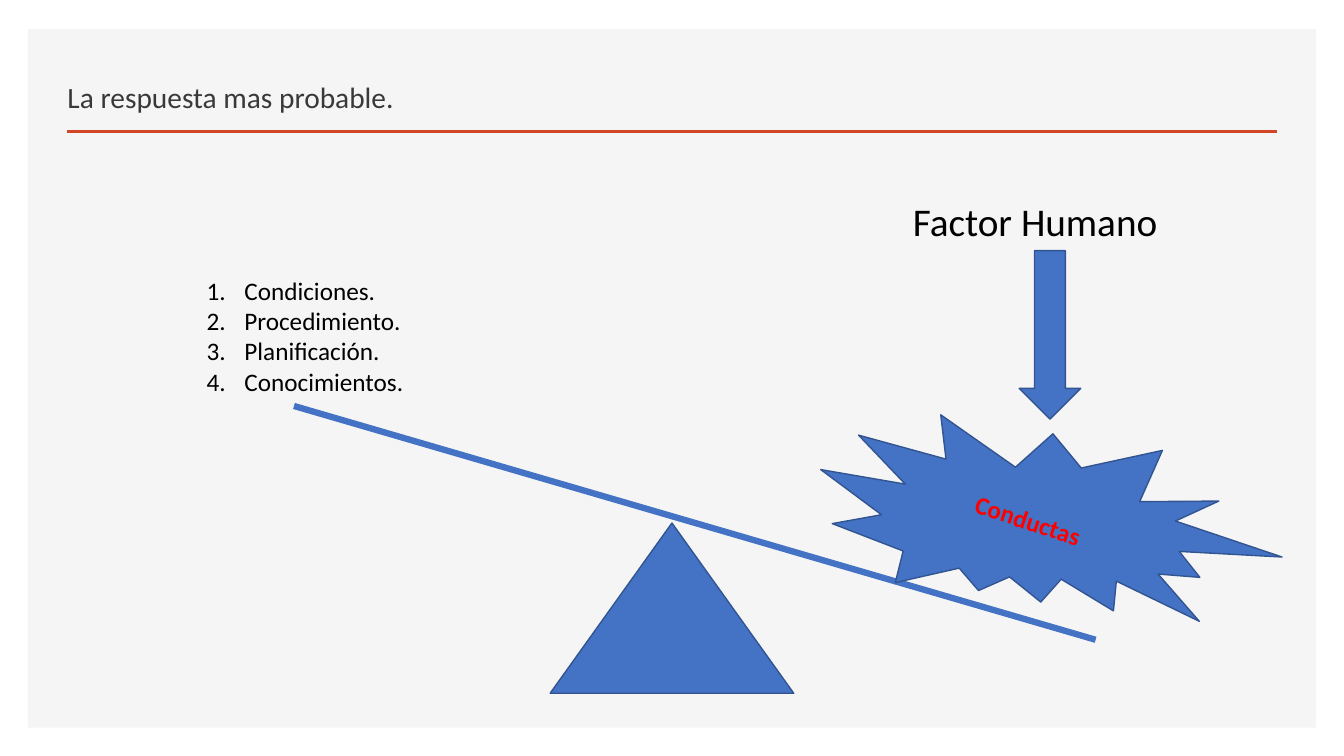
from lxml.etree import SubElement
from pptx import Presentation
from pptx.dml.color import RGBColor
from pptx.enum.shapes import MSO_CONNECTOR, MSO_SHAPE
from pptx.enum.text import MSO_ANCHOR, MSO_AUTO_SIZE, PP_ALIGN
from pptx.oxml.ns import qn
from pptx.util import Pt

COLORS = {
    "panel": "F5F5F5", "rule": "D24726", "title": "3B3838", "text": "000000",
    "blue": "4472C4", "outline": "325491", "alert": "FF0000",
}
COLORS = {name: RGBColor.from_string(value) for name, value in COLORS.items()}


def style_text(para, size, color, bold=False):
    para.font.name = "Calibri"
    para.font.size = Pt(size)
    para.font.bold = bold
    para.font.color.rgb = COLORS[color]


def add_line(page, start, end, color, width):
    line = page.shapes.add_connector(
        MSO_CONNECTOR.STRAIGHT, *(Pt(value) for value in start + end))
    line.line.color.rgb = COLORS[color]
    line.line.width = Pt(width)
    SubElement(line._element.spPr, qn("a:effectLst"))
    return line


deck = Presentation()
deck.slide_width, deck.slide_height = Pt(960), Pt(540)
page = deck.slides.add_slide(deck.slide_layouts[1])
title, causes = page.placeholders

# Backdrop, placed behind the placeholders
panel = page.shapes.add_shape(
    MSO_SHAPE.RECTANGLE, Pt(20), Pt(20.8), Pt(920), Pt(499))
panel.shadow.inherit = False
panel.fill.solid()
panel.fill.fore_color.rgb = COLORS["panel"]
panel.line.fill.background()
page.shapes._spTree.insert(2, panel._element)
add_line(page, (47.8, 94), (912, 94), "rule", 2)

# Title
title.left, title.top, title.width, title.height = Pt(41), Pt(35), Pt(541), Pt(50.4)
title.text_frame.text = "La respuesta mas probable."
title.text_frame.vertical_anchor = MSO_ANCHOR.BOTTOM
title.text_frame.auto_size = MSO_AUTO_SIZE.NONE
para = title.text_frame.paragraphs[0]
para.alignment = PP_ALIGN.LEFT
para.line_spacing = 0.9
style_text(para, 21, "title")

# Numbered causes on the light side
causes.left, causes.top, causes.width, causes.height = Pt(140.4), Pt(193), Pt(253), Pt(94.5)
causes.text_frame.text = "Condiciones.\nProcedimiento.\nPlanificación.\nConocimientos."
causes.text_frame.auto_size = MSO_AUTO_SIZE.NONE
for para in causes.text_frame.paragraphs:
    properties = para._p.get_or_add_pPr()
    properties.set("marL", str(Pt(27)))
    properties.set("indent", str(Pt(-27)))
    SubElement(properties, qn("a:buFont"), typeface="+mj-lt")
    SubElement(properties, qn("a:buAutoNum"), type="arabicPeriod")
    para.space_before = Pt(0)
    style_text(para, 18, "text")

# Seesaw, burst and arrow
add_line(page, (210, 290), (782.6, 457), "blue", 4.5)
blue_shapes = [
    (MSO_SHAPE.ISOSCELES_TRIANGLE, 393, 373.6, 174, 121.6, 0, ""),
    (MSO_SHAPE.EXPLOSION2, 582.5, 299, 332.6, 149, 18.1, "Conductas "),
    (MSO_SHAPE.DOWN_ARROW, 728, 179, 44, 120.4, 0, ""),
]
for kind, left, top, width, height, rotation, label in blue_shapes:
    shape = page.shapes.add_shape(kind, Pt(left), Pt(top), Pt(width), Pt(height))
    shape.rotation = rotation
    shape.shadow.inherit = False
    shape.fill.solid()
    shape.fill.fore_color.rgb = COLORS["blue"]
    shape.line.color.rgb = COLORS["outline"]
    shape.line.width = Pt(1)
    if label:
        shape.text_frame.text = label
        shape.text_frame.vertical_anchor = MSO_ANCHOR.MIDDLE
        para = shape.text_frame.paragraphs[0]
        para.alignment = PP_ALIGN.CENTER
        style_text(para, 18, "alert", bold=True)

# Heading above the arrow
heading = page.shapes.add_textbox(Pt(645), Pt(137.5), Pt(206), Pt(41))
heading.text_frame.word_wrap = True
heading.text_frame.text = "Factor Humano"
style_text(heading.text_frame.paragraphs[0], 28, "text")

deck.save("out.pptx")
